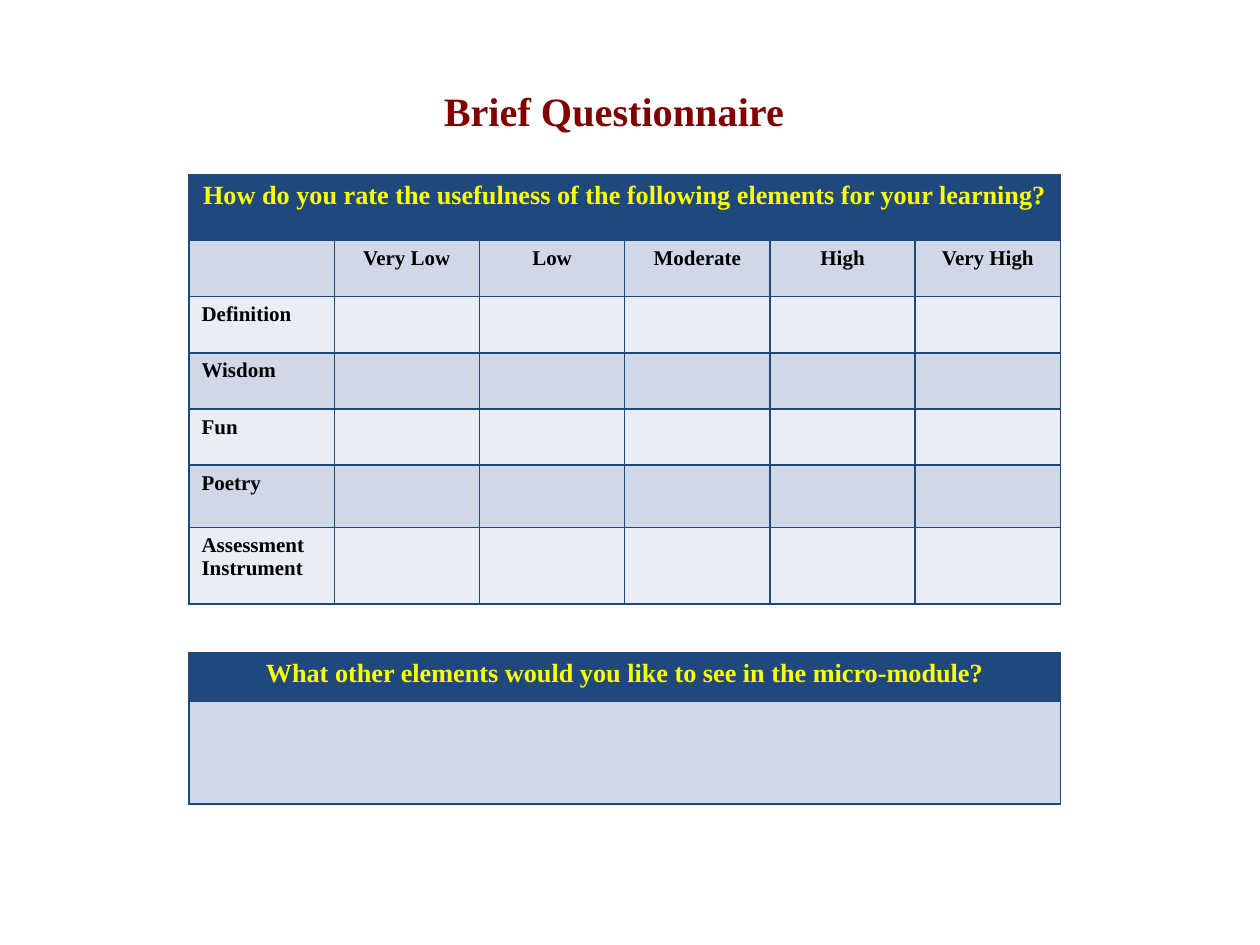
from pptx import Presentation
from pptx.dml.color import RGBColor
from pptx.enum.text import PP_ALIGN
from pptx.oxml import parse_xml
from pptx.oxml.ns import nsdecls
from pptx.util import Pt

MAROON = RGBColor(0x80, 0x00, 0x00)
NAVY = RGBColor(0x1F, 0x49, 0x7D)
YELLOW = RGBColor(0xFF, 0xFF, 0x00)
BLACK = RGBColor(0x00, 0x00, 0x00)
BAND = RGBColor(0xD0, 0xD8, 0xE8)
PALE = RGBColor(0xE9, 0xED, 0xF4)
LEFT, WIDTH = 108, 498


def write(tf, text, size, color, align):
    tf.text = text
    for p in tf.paragraphs:
        p.alignment = align
        p.font.name = "Times New Roman"
        p.font.size = Pt(size)
        p.font.bold = True
        p.font.color.rgb = color


def add_grid(top, heights, rows):
    cols = len(rows[0])
    table = s.shapes.add_table(len(rows), cols, Pt(LEFT), Pt(top),
                               Pt(WIDTH), Pt(sum(heights))).table
    for column in table.columns:
        column.width = Pt(WIDTH / cols)
    for i, texts in enumerate(rows):
        table.rows[i].height = Pt(heights[i])
        for j, text in enumerate(texts):
            cell = table.cell(i, j)
            pr = cell._tc.get_or_add_tcPr()
            for side in ("lnL", "lnR", "lnT", "lnB"):
                pr.append(parse_xml(
                    f'<a:{side} {nsdecls("a")} w="12700"><a:solidFill>'
                    f'<a:srgbClr val="{NAVY}"/></a:solidFill></a:{side}>'))
            cell.fill.solid()
            cell.fill.fore_color.rgb = NAVY if i == 0 else BAND if i % 2 else PALE
            if text:
                centred = i == 0 or j > 0
                write(cell.text_frame, text, 15 if i == 0 else 12,
                      YELLOW if i == 0 else BLACK,
                      PP_ALIGN.CENTER if centred else PP_ALIGN.LEFT)
    if cols > 1:
        table.cell(0, 0).merge(table.cell(0, cols - 1))


prs = Presentation()
prs.slide_width, prs.slide_height = Pt(720), Pt(540)
s = prs.slides.add_slide(prs.slide_layouts[6])

tf = s.shapes.add_textbox(Pt(162), Pt(46), Pt(378), Pt(45.5)).text_frame
tf.word_wrap = True
write(tf, "Brief Questionnaire", 23, MAROON, PP_ALIGN.CENTER)
tf.paragraphs[0].space_before = Pt(4.6)

ratings = ["Very Low", "Low", "Moderate", "High", "Very High"]
elements = ["Definition", "Wisdom", "Fun", "Poetry", "Assessment\nInstrument"]
blanks = [""] * len(ratings)
question = "How do you rate the usefulness of the following elements for your learning?"
add_grid(100, [37.5, 32.1, 32.1, 32.1, 32.1, 35.5, 43.8],
         [[question] + blanks, [""] + ratings] + [[e] + blanks for e in elements])

add_grid(373, [27.5, 59],
         [["What other elements would you like to see in the micro-module?"], [""]])

prs.save("out.pptx")
